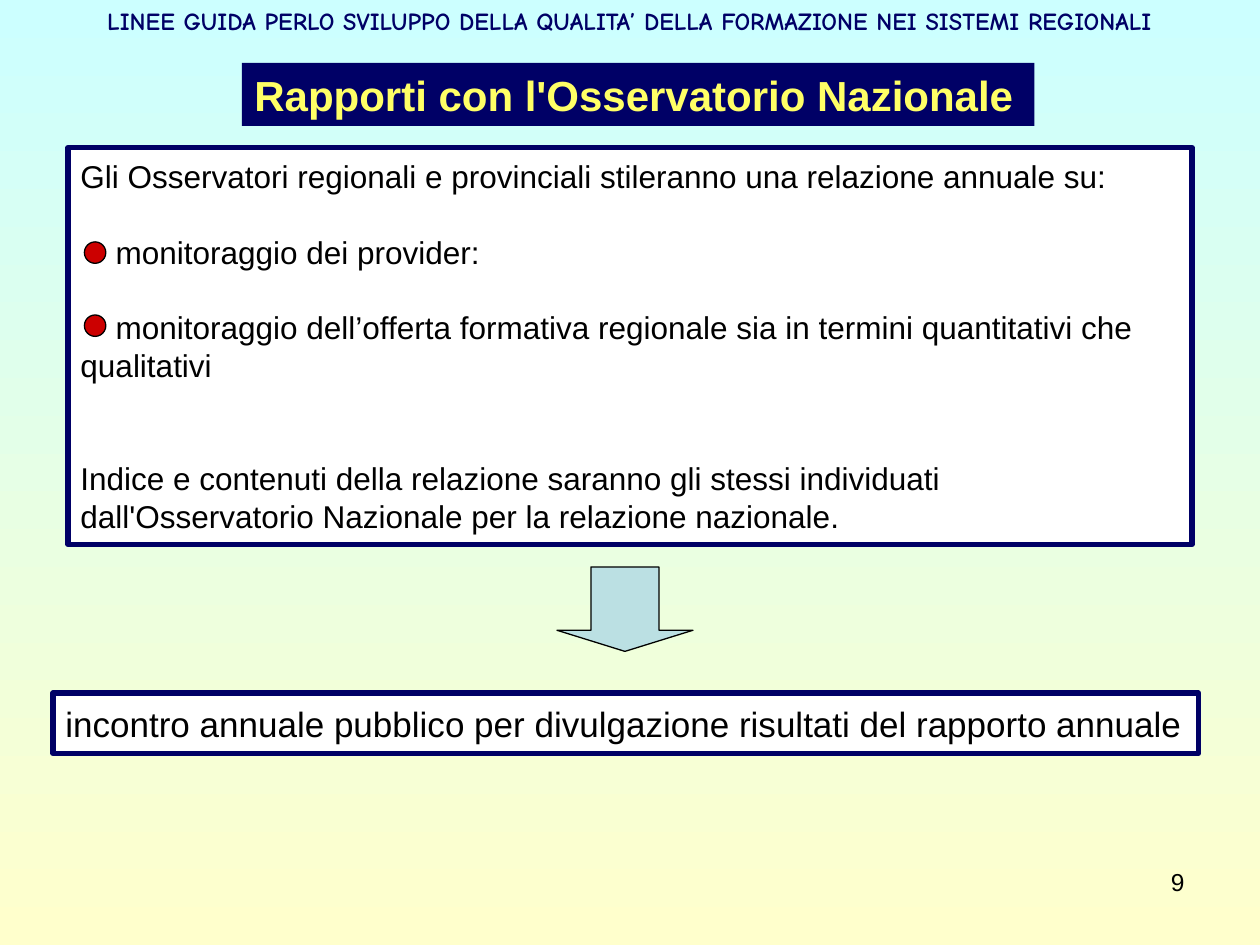
from typing import NamedTuple, Optional

from pptx import Presentation
from pptx.dml.color import RGBColor
from pptx.enum.shapes import MSO_SHAPE as Shape
from pptx.enum.text import MSO_ANCHOR as Anchor, PP_ALIGN as Align
from pptx.util import Inches, Pt

COLORS = {
    "sky": "CCFFFF",
    "cream": "FFFFCC",
    "navy": "000066",
    "yellow": "FFFF66",
    "white": "FFFFFF",
    "black": "000000",
    "red": "CC0000",
    "arrow": "BBE0E3",
}
LINE_PITCH = 21.55  # points between the baselines of the report text


class Box(NamedTuple):
    left: float
    top: float
    width: float
    height: float


class ReportLine(NamedTuple):
    text: str
    blank_lines: int = 0
    indent: float = 0


REPORT = [
    ReportLine("Gli Osservatori regionali e provinciali stileranno una relazione annuale su:"),
    ReportLine("monitoraggio dei provider:", 1, 0.28),
    ReportLine("monitoraggio dell’offerta formativa regionale sia in termini "
               "quantitativi che qualitativi", 1, 0.28),
    ReportLine("Indice e contenuti della relazione saranno gli stessi individuati", 2),
    ReportLine("dall'Osservatorio Nazionale per la relazione nazionale."),
]


def color(name: str) -> RGBColor:
    return RGBColor.from_string(COLORS[name])


def add_figure(slide, kind: Shape, box: Box, fill: str,
               line: Optional[str] = None, line_width: float = 0.75):
    figure = slide.shapes.add_shape(kind, *map(Inches, box))
    figure.shadow.inherit = False
    figure.fill.solid()
    figure.fill.fore_color.rgb = color(fill)
    if line:
        figure.line.color.rgb = color(line)
        figure.line.width = Pt(line_width)
    else:
        figure.line.fill.background()
    return figure


def add_label(slide, box: Box):
    return slide.shapes.add_textbox(*map(Inches, box))


def write(paragraph, text: str, *, size: float, ink: str = "black", font: str = "Arial",
          bold: bool = False, align: Align = Align.LEFT) -> None:
    paragraph.alignment = align
    run = paragraph.add_run()
    run.text = text
    run.font.name = font
    run.font.size = Pt(size)
    run.font.bold = bold
    run.font.color.rgb = color(ink)


def open_frame(shape, anchor: Anchor = Anchor.MIDDLE):
    """Make the shape's text wrap and return its text frame."""
    frame = shape.text_frame
    frame.word_wrap = True
    frame.vertical_anchor = anchor
    return frame


def paint_background(slide) -> None:
    fill = slide.background.fill
    fill.gradient()
    fill.gradient_angle = 270
    for stop, position, name in zip(fill.gradient_stops, (0, 1), ("sky", "cream")):
        stop.position = position
        stop.color.rgb = color(name)


def write_report(frame) -> None:
    for index, line in enumerate(REPORT):
        paragraph = frame.add_paragraph() if index else frame.paragraphs[0]
        paragraph.line_spacing = Pt(LINE_PITCH)
        paragraph.space_before = Pt(line.blank_lines * LINE_PITCH)
        if line.indent:
            properties = paragraph._p.get_or_add_pPr()
            properties.set("marL", "0")
            properties.set("indent", str(Inches(line.indent)))
        write(paragraph, line.text, size=18)


def main() -> None:
    deck = Presentation()
    deck.slide_width, deck.slide_height = Inches(10), Inches(7.5)
    slide = deck.slides.add_slide(deck.slide_layouts[6])
    paint_background(slide)

    page_number = add_label(slide, Box(7.17, 6.83, 2.33, 0.52))
    write(open_frame(page_number, Anchor.TOP).paragraphs[0], "9", size=14, align=Align.RIGHT)

    title = add_figure(slide, Shape.RECTANGLE, Box(1.92, 0.5, 6.29, 0.5), "navy")
    write(open_frame(title).paragraphs[0], "Rapporti con l'Osservatorio Nazionale",
          size=24, ink="yellow", bold=True)

    report = add_figure(slide, Shape.RECTANGLE, Box(0.54, 1.17, 8.92, 3.15), "white", "navy", 3)
    write_report(open_frame(report))
    for bullet_top in (1.92, 2.5):
        add_figure(slide, Shape.OVAL, Box(0.67, bullet_top, 0.17, 0.17), "red", "black")

    meeting = add_figure(slide, Shape.RECTANGLE, Box(0.42, 5.5, 9.09, 0.48), "white", "navy", 3)
    write(open_frame(meeting).paragraphs[0],
          "incontro annuale pubblico per divulgazione risultati del rapporto annuale", size=20)

    arrow = add_figure(slide, Shape.DOWN_ARROW, Box(4.42, 4.5, 1.08, 0.67), "arrow", "black")
    arrow.adjustments[0] = 0.5
    arrow.adjustments[1] = 0.25

    header = add_label(slide, Box(0, 0, 10, 0.33))
    write(open_frame(header).paragraphs[0],
          "LINEE GUIDA PERLO SVILUPPO DELLA QUALITA’ DELLA FORMAZIONE NEI SISTEMI REGIONALI",
          size=14, ink="navy", font="Comic Neue", bold=True, align=Align.CENTER)

    deck.save("out.pptx")


if __name__ == "__main__":
    main()
